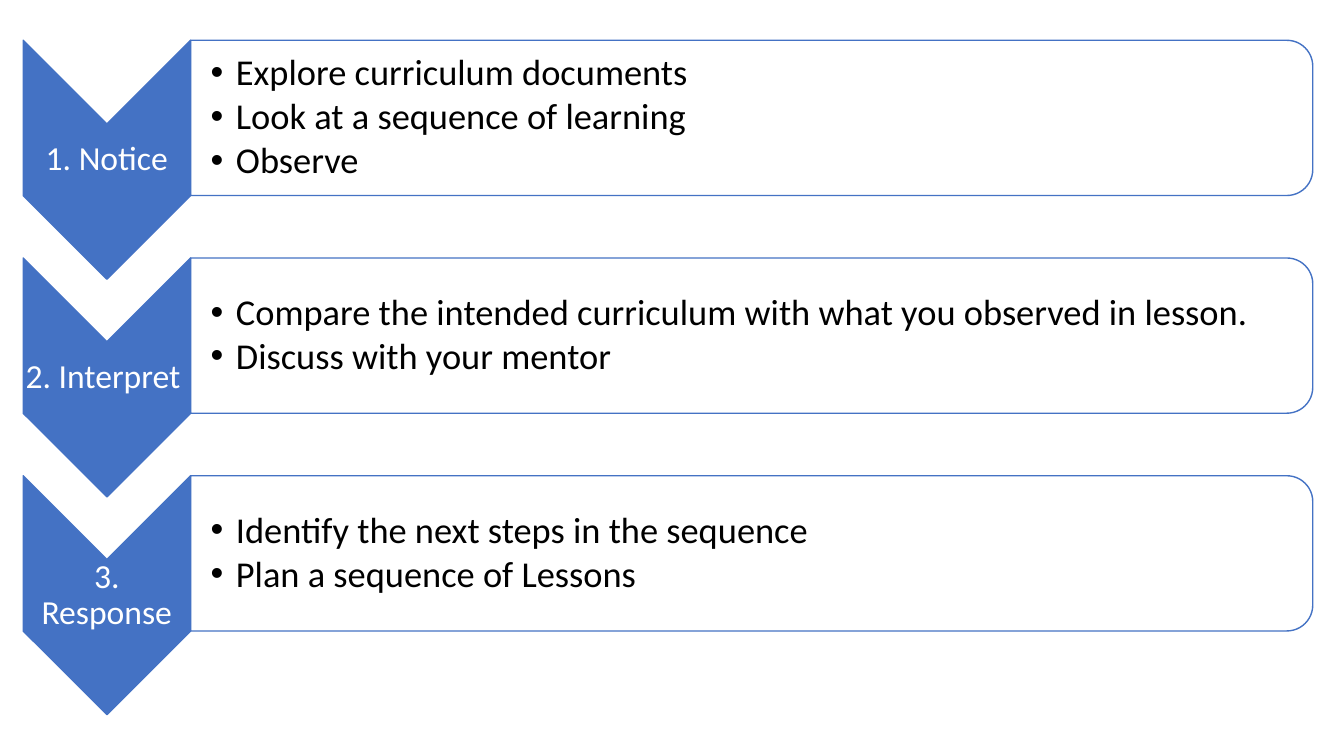
from lxml.etree import SubElement as Sub
from pptx import Presentation
from pptx.dml.color import RGBColor
from pptx.enum.shapes import MSO_SHAPE as Shape
from pptx.enum.text import MSO_ANCHOR as Anchor, PP_ALIGN as Align
from pptx.oxml.ns import qn
from pptx.util import Inches, Pt

WIDE, HIGH = 13.33, 7.5
LEFT, TOP, PITCH = 0.23, 0.4, 2.16
ARROW_W, ARROW_H = 1.66, 2.37
PANEL_W, PANEL_H = 11.13, 1.54
BLUE, WHITE, BLACK = "4472C4", "FFFFFF", "000000"
STEPS = [
    ("1. Notice", ["Explore curriculum documents",
                   "Look at a sequence of learning", "Observe"]),
    ("2. Interpret ", ["Compare the intended curriculum with what you observed in lesson.",
                       "Discuss with your mentor"]),
    ("3. Response", ["Identify the next steps in the sequence",
                     "Plan a sequence of Lessons"]),
]


def paint(form, color):
    """Set a solid colour on a fill, and return the colour format."""
    form.solid()
    form.fore_color.rgb = RGBColor.from_string(color)
    return form.fore_color


def turned(slide, kind, left, top, wide, high, color):
    """Add a shape turned by 90 degrees that covers the given box."""
    shift = (wide - high) / 2
    shape = slide.shapes.add_shape(kind, Inches(left + shift), Inches(top - shift),
                                   Inches(high), Inches(wide))
    shape.rotation = 90
    shape.shadow.inherit = False
    paint(shape.fill, color)
    paint(shape.line.fill, BLUE)
    shape.line.width = Pt(1)
    return shape


def fade(shape, share):
    """Make the solid fill of a shape partly opaque."""
    tone = shape.fill._xPr.find(qn("a:solidFill"))[0]
    Sub(tone, qn("a:alpha"), val=str(int(share * 100000)))


def write(slide, left, top, wide, high, lines, size, color, inset=0.02):
    """Add a text box centred in height and return its paragraphs."""
    box = slide.shapes.add_textbox(Inches(left), Inches(top), Inches(wide), Inches(high))
    frame = box.text_frame
    frame.word_wrap = True
    frame.vertical_anchor = Anchor.MIDDLE
    frame.margin_left = Inches(inset)
    frame.margin_top = frame.margin_right = frame.margin_bottom = Inches(0.02)
    frame.text = "\n".join(lines)
    for para in frame.paragraphs:
        para.line_spacing = 0.9
        for run in para.runs:
            run.font.name = "Calibri"
            run.font.size = Pt(size)
            paint(run.font.fill, color)
    return frame.paragraphs


def bullet(para):
    """Give a paragraph a bullet with a hanging indent."""
    para.level = 1
    para.space_after = Pt(3.3)
    props = para._p.get_or_add_pPr()
    props.set("marL", str(Inches(0.25)))
    props.set("indent", str(Inches(-0.25)))
    Sub(props, qn("a:buFont"), typeface="Arial")
    Sub(props, qn("a:buChar"), char="•")


def step(slide, top, label, points):
    """Draw one step: an arrow with its label and a panel of points."""
    edge = LEFT + ARROW_W
    turned(slide, Shape.CHEVRON, LEFT, top, ARROW_W, ARROW_H, BLUE)
    label_h = ARROW_H - ARROW_W
    write(slide, LEFT, top + ARROW_W / 2, ARROW_W, label_h,
          [label], 24, WHITE)[0].alignment = Align.CENTER
    panel = turned(slide, Shape.ROUND_2_SAME_RECTANGLE, edge, top, PANEL_W, PANEL_H, WHITE)
    fade(panel, 0.9)
    pad = 0.07
    for para in write(slide, edge, top + pad, PANEL_W - pad, PANEL_H - 2 * pad,
                      points, 26, BLACK, 0.2):
        bullet(para)


def main():
    """Build the slide and save it."""
    deck = Presentation()
    deck.slide_width, deck.slide_height = Inches(WIDE), Inches(HIGH)
    slide = deck.slides.add_slide(deck.slide_layouts[6])
    for row, (label, points) in enumerate(STEPS):
        step(slide, TOP + row * PITCH, label, points)
    deck.save("out.pptx")


if __name__ == "__main__":
    main()
